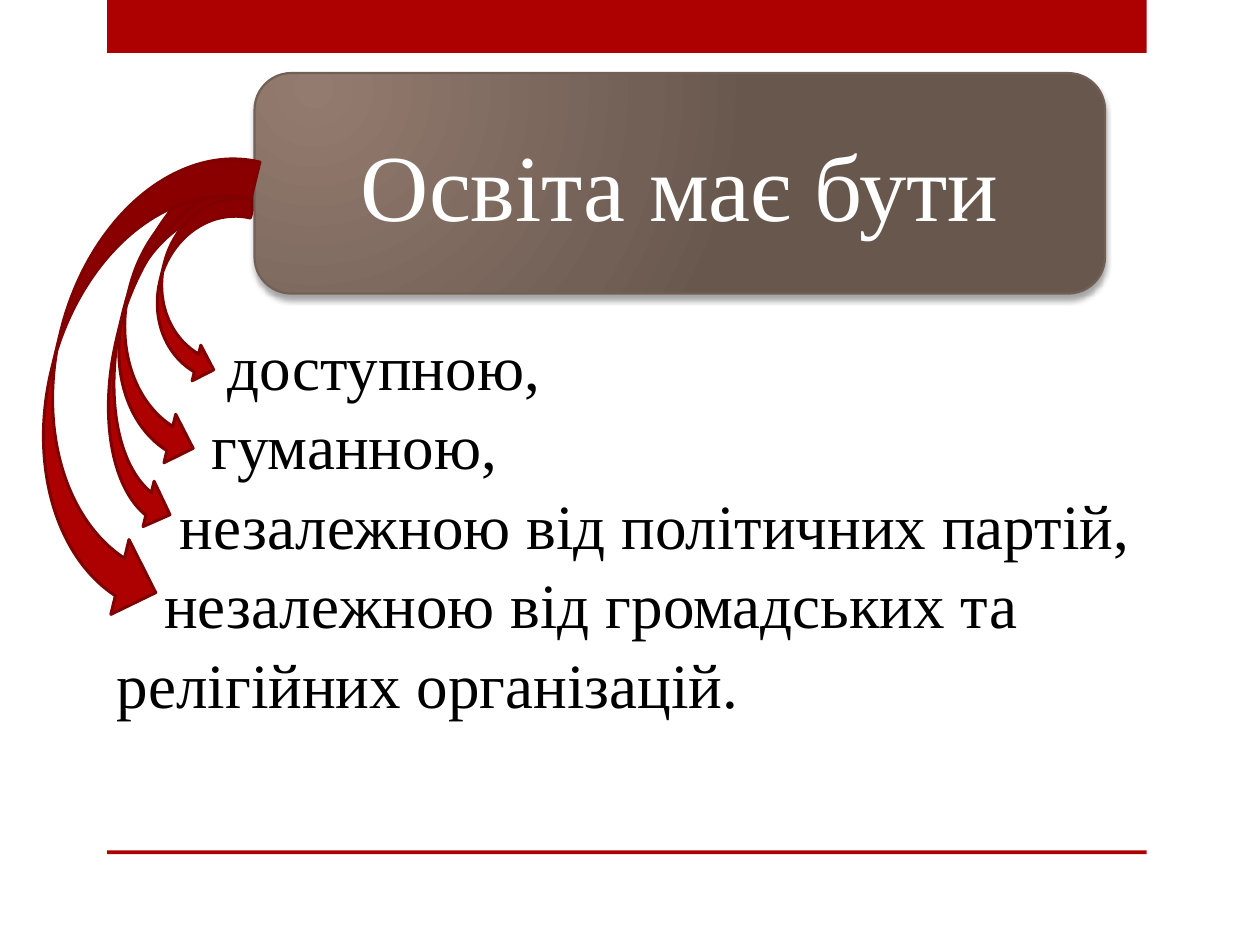
from lxml import etree
from pptx import Presentation
from pptx.dml.color import RGBColor
from pptx.enum.shapes import MSO_SHAPE
from pptx.enum.text import MSO_ANCHOR, MSO_AUTO_SIZE, PP_ALIGN
from pptx.oxml import parse_xml
from pptx.oxml.ns import nsdecls, qn
from pptx.util import Inches, Pt

RECTANGLE = MSO_SHAPE.RECTANGLE
CURVED_ARROW = MSO_SHAPE.CURVED_RIGHT_ARROW
ROUNDED_PANEL = MSO_SHAPE.FLOWCHART_ALTERNATE_PROCESS
MIDDLE = MSO_ANCHOR.MIDDLE
GROW = MSO_AUTO_SIZE.SHAPE_TO_FIT_TEXT
LEFT, CENTER = PP_ALIGN.LEFT, PP_ALIGN.CENTER

RED = RGBColor(0xAD, 0x01, 0x01)
DARK_RED = RGBColor(0x80, 0x01, 0x01)
BROWN = RGBColor(0x72, 0x60, 0x56)
LIGHT_BROWN = RGBColor(0x94, 0x7B, 0x6F)
DEEP_BROWN = RGBColor(0x67, 0x57, 0x4D)
BLACK = RGBColor(0, 0, 0)
WHITE = RGBColor(0xFF, 0xFF, 0xFF)

FONT = "Times New Roman"
WIDTH, HEIGHT = Inches(10), Inches(7.5)
COLUMNS, ROWS = 100, 75
INDENT_STEP = 1.25
ARROW_TILT = 13.6

# Quality and its indent in steps
QUALITIES = [
    ("доступною,", 7),
    ("гуманною,", 6),
    ("незалежною від політичних партій,", 4),
    ("незалежною від громадських та релігійних організацій.", 3),
]
SHORT_ARROWS = [(9.8, 13.7, 7.9, 23.2), (12.7, 15, 5.8, 15.3), (9.3, 12.1, 7.4, 30.1)]
LONG_ARROW = (4.1, 10.9, 12.2, 38.2)


def columns(count):
    """Return the width of a number of grid columns."""
    return round(WIDTH * count / COLUMNS)


def place(box):
    """Turn left, top, width and height in grid units into lengths."""
    left, top, width, height = box
    row = HEIGHT / ROWS
    return columns(left), round(top * row), columns(width), round(height * row)


def add_figure(slide, kind, box, fill=None, line=None, line_width=1, tilt=0):
    """Add a preset shape without a shadow."""
    figure = slide.shapes.add_shape(kind, *place(box))
    figure.shadow.inherit = False
    figure.rotation = tilt
    if fill is not None:
        figure.fill.solid()
        figure.fill.fore_color.rgb = fill
    if line is None:
        figure.line.fill.background()
    else:
        figure.line.color.rgb = line
        figure.line.width = Pt(line_width)
    return figure


def add_arrow(slide, box):
    """Add a tilted curved arrow."""
    add_figure(slide, CURVED_ARROW, box, RED, DARK_RED, 1.75, ARROW_TILT)


def write(paragraph, text, size=36, color=BLACK, align=LEFT, indent=0, spacing=None):
    """Write formatted text into a paragraph with a first-line indent."""
    run = paragraph.add_run()
    run.text = text
    run.font.name = FONT
    run.font.size = Pt(size)
    run.font.color.rgb = color
    paragraph.alignment = align
    if spacing:
        paragraph.line_spacing = spacing
    if indent:
        properties = paragraph._p.get_or_add_pPr()
        properties.set("marL", "0")
        properties.set("indent", str(columns(indent * INDENT_STEP)))


def set_radial_fill(figure, stops):
    """Fill a shape with a gradient that spreads from its upper left."""
    figure.fill.gradient()
    gradient = figure.element.spPr.find(qn("a:gradFill"))
    stop_xml = "".join(
        f'<a:gs pos="{share * 1000}"><a:srgbClr val="{color}"/></a:gs>'
        for share, color in stops
    )
    radial = parse_xml(
        f'<a:gradFill {nsdecls("a")} rotWithShape="1"><a:gsLst>{stop_xml}</a:gsLst>'
        '<a:path path="circle"><a:fillToRect l="15000" t="15000" r="100000" b="100000"/>'
        "</a:path></a:gradFill>"
    )
    gradient.getparent().replace(gradient, radial)


def set_drop_shadow(figure):
    """Cast a soft shadow straight down."""
    effects = figure.element.spPr.find(qn("a:effectLst"))
    shadow = etree.SubElement(
        effects, qn("a:outerShdw"), blurRad=str(Pt(3)), dist=str(Pt(3)),
        dir="5400000", algn="ctr", rotWithShape="0",
    )
    color = etree.SubElement(shadow, qn("a:srgbClr"), val=str(BLACK))
    etree.SubElement(color, qn("a:alpha"), val="35000")


def add_heading(slide):
    """Add the heading on its brown panel."""
    panel = add_figure(slide, ROUNDED_PANEL, (20.2, 5.8, 67.5, 17.5),
                       line=BROWN, line_width=1.25)
    set_radial_fill(panel, [(0, LIGHT_BROWN), (76, BROWN), (100, DEEP_BROWN)])
    set_drop_shadow(panel)
    panel.text_frame.vertical_anchor = MIDDLE
    write(panel.text_frame.paragraphs[0], "Освіта має бути",
          size=54, color=WHITE, align=CENTER)


def add_qualities(slide):
    """Add the list of qualities, each line stepping to the left."""
    frame = slide.shapes.add_textbox(*place((8.3, 25.8, 91.7, 31.3))).text_frame
    frame.word_wrap = True
    frame.auto_size = GROW
    frame.vertical_anchor = MIDDLE
    for number, (quality, indent) in enumerate(QUALITIES):
        paragraph = frame.add_paragraph() if number else frame.paragraphs[0]
        write(paragraph, quality, indent=indent, spacing=1.05)


def main():
    """Build the slide and save it."""
    deck = Presentation()
    deck.slide_width, deck.slide_height = WIDTH, HEIGHT
    slide = deck.slides.add_slide(deck.slide_layouts[6])
    for top, height in [(0, 4.2), (67.5, 0.3)]:
        add_figure(slide, RECTANGLE, (8.5, top, 82.5, height), RED)
    add_qualities(slide)
    for box in SHORT_ARROWS:
        add_arrow(slide, box)
    add_heading(slide)
    add_arrow(slide, LONG_ARROW)
    deck.save("out.pptx")


main()
